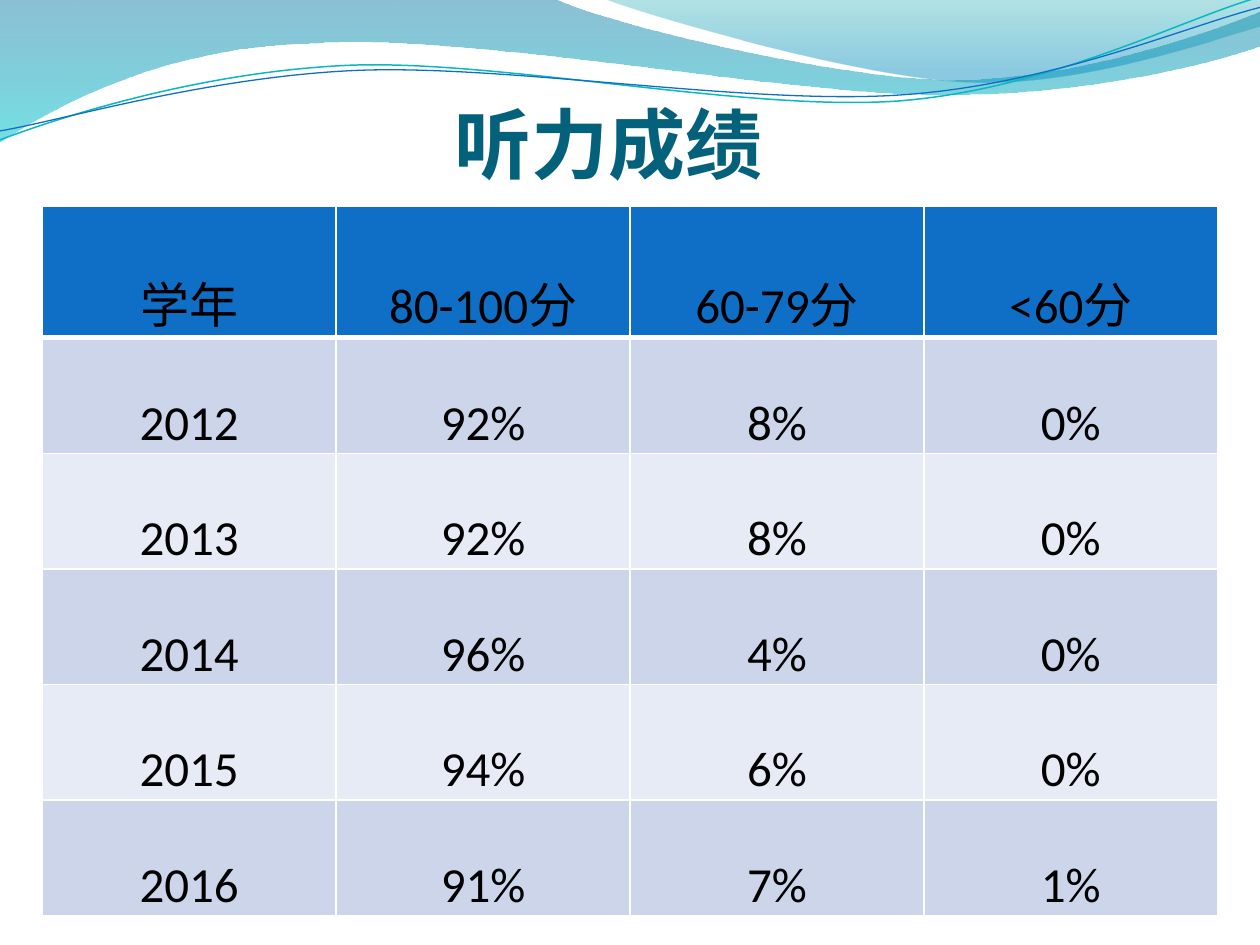
from lxml import etree
from pptx import Presentation
from pptx.dml.color import RGBColor
from pptx.enum.text import MSO_ANCHOR, MSO_AUTO_SIZE, PP_ALIGN
from pptx.oxml.ns import qn
from pptx.util import Cm, Pt

BOTTOM = MSO_ANCHOR.BOTTOM
CENTER = PP_ALIGN.CENTER
NO_AUTOSIZE = MSO_AUTO_SIZE.NONE

COLORS = {
    "title": "04617B",
    "text": "000000",
    "border": "FFFFFF",
    "header": "0F6FC6",
    "band_dark": "CCD5EA",
    "band_light": "E7EBF5",
    "deep_blue": "0074A1",
    "aqua": "00C6CF",
    "teal": "00A1A9",
    "sky": "008BBF",
    "teal_line": "0AB8BF",
    "blue_line": "0F6FC6",
}
BODY_FONT = "Calibri"
UNIT_FONT = "TeX Gyre Pagella"
CURVE_TILT = 357.3

LARGE_WAVE = [
    (0, 0), (11.18, -0.03),
    (12.09, 0.43, 16.87, 1.6, 19.25, 1.6),
    (21.67, 1.6, 24.33, 0.66, 25.4, 0.23),
    (25.43, 0.91),
    (24.97, 1.12, 22.1, 1.93, 18.95, 1.91),
    (15.8, 1.91, 9.7, 0.71, 6.53, 0.86),
    (3.28, 0.91, 1.17, 2.11, -0.03, 2.87),
    (0, 0),
]
SMALL_WAVE = [
    (12.17, -0.03),
    (12.93, 0.28, 17.32, 1.57, 19.53, 1.65),
    (21.74, 1.75, 24.41, 0.81, 25.4, 0.53),
    (25.4, 0), (12.17, -0.03),
]
TEAL_CURVE = [
    (-0.05, 2.22),
    (1.19, 1.82, 4.02, 1.04, 7.05, 1.05),
    (10.05, 1.07, 15.02, 2.37, 18.08, 2.29),
    (21.13, 2.2, 23.87, 0.91, 25.41, 0.55),
]
BLUE_CURVE = [
    (-0.04, 2.04),
    (1.16, 1.9, 4.18, 1.15, 7.2, 1.16),
    (10.25, 1.18, 15.13, 2.25, 18.18, 2.17),
    (21.21, 2.1, 23.93, 1.06, 25.45, 0.75),
]

HEADERS = [
    [("学年", BODY_FONT)],
    [("80-100分", BODY_FONT)],
    [("60-79", BODY_FONT), ("分", UNIT_FONT)],
    [("<60", BODY_FONT), ("分", UNIT_FONT)],
]
SCORES = [
    ("2012", "92%", "8%", "0%"),
    ("2013", "92%", "8%", "0%"),
    ("2014", "96%", "4%", "0%"),
    ("2015", "94%", "6%", "0%"),
    ("2016", "91%", "7%", "1%"),
]


def color(name):
    return RGBColor.from_string(COLORS[name])


def add_span(para, text, font=BODY_FONT, size=28, fill="text", bold=False):
    para.alignment = CENTER
    span = para.add_run()
    span.text = text
    span.font.name = font
    span.font.size = Pt(size)
    span.font.bold = bold
    span.font.color.rgb = color(fill)


class ScoreSlide:
    def __init__(self, deck):
        self.page = deck.slides.add_slide(deck.slide_layouts[5])

    def outline(self, segments, close):
        points = [
            (Cm(x), Cm(y))
            for segment in segments
            for x, y in zip(segment[::2], segment[1::2])
        ]
        builder = self.page.shapes.build_freeform(*points[0])
        builder.add_line_segments(points[1:], close=close)
        shape = builder.convert_to_shape()
        shape.shadow.inherit = False
        steps = iter(list(shape.element.iter(qn("a:lnTo"))))
        for segment in segments[1:]:
            step = next(steps)
            if len(segment) == 6:
                bend = etree.Element(qn("a:cubicBezTo"))
                step.addprevious(bend)
                for control in (step, next(steps), next(steps)):
                    bend.append(control[0])
                    control.getparent().remove(control)
        return shape

    def wave(self, segments, stops):
        shape = self.outline(segments, True)
        shape.line.fill.background()
        shape.fill.gradient()
        shape.fill.gradient_angle = 270
        for stop, (position, name, _) in zip(shape.fill.gradient_stops, stops):
            stop.position = position
            stop.color.rgb = color(name)
        tints = shape.element.spPr.iter(qn("a:srgbClr"))
        for tint, (_, _, opacity) in zip(tints, stops):
            etree.SubElement(tint, qn("a:alpha")).set("val", str(opacity * 1000))

    def curve(self, segments, name, width):
        shape = self.outline(segments, False)
        shape.rotation = CURVE_TILT
        shape.fill.background()
        shape.line.color.rgb = color(name)
        shape.line.width = Pt(width)

    def title(self, text):
        box = self.page.shapes.title
        self.page.shapes.element.append(box.element)
        box.left, box.top, box.width, box.height = Cm(0.84), Cm(0.63), Cm(22.86), Cm(3.18)
        frame = box.text_frame
        frame.auto_size = NO_AUTOSIZE
        frame.word_wrap = True
        frame.vertical_anchor = BOTTOM
        frame.margin_left = frame.margin_right = frame.margin_bottom = 0
        frame.margin_top = Cm(0.13)
        add_span(frame.paragraphs[0], text, size=44, fill="title", bold=True)

    def cell(self, cell, spans, fill, top=1, bottom=1):
        cell.fill.solid()
        cell.fill.fore_color.rgb = color(fill)
        cell.vertical_anchor = BOTTOM
        cell.margin_left = cell.margin_top = cell.margin_right = Cm(0.03)
        cell.margin_bottom = 0
        for text, font in spans:
            add_span(cell.text_frame.paragraphs[0], text, font=font)
        properties = cell._tc.get_or_add_tcPr()
        borders = (("lnL", 1), ("lnR", 1), ("lnT", top), ("lnB", bottom))
        for index, (side, width) in enumerate(borders):
            border = etree.Element(qn("a:" + side), w=str(Pt(width)))
            paint = etree.SubElement(border, qn("a:solidFill"))
            etree.SubElement(paint, qn("a:srgbClr")).set("val", COLORS["border"])
            properties.insert(index, border)

    def table(self, headers, records):
        header_height, row_height = Cm(2.65), Cm(2.33)
        table = self.page.shapes.add_table(
            len(records) + 1, len(headers), Cm(0.85), Cm(4.16),
            Cm(23.7), header_height + row_height * len(records),
        ).table
        table.first_row = table.horz_banding = False
        for row in table.rows:
            row.height = row_height
        table.rows[0].height = header_height
        for column, spans in enumerate(headers):
            self.cell(table.cell(0, column), spans, "header", bottom=3)
        for row, record in enumerate(records, 1):
            band = "band_dark" if row % 2 else "band_light"
            for column, text in enumerate(record):
                self.cell(table.cell(row, column), [(text, BODY_FONT)], band,
                          top=3 if row == 1 else 1)


def main():
    deck = Presentation()
    deck.slide_width, deck.slide_height = Cm(25.4), Cm(19.05)
    slide = ScoreSlide(deck)
    slide.wave(LARGE_WAVE, [(0, "deep_blue", 45), (1, "aqua", 55)])
    slide.wave(SMALL_WAVE, [(0, "teal", 30), (0.8, "sky", 45)])
    slide.curve(TEAL_CURVE, "teal_line", 0.85)
    slide.curve(BLUE_CURVE, "blue_line", 0.75)
    slide.title("听力成绩")
    slide.table(HEADERS, SCORES)
    deck.save("out.pptx")


if __name__ == "__main__":
    main()
